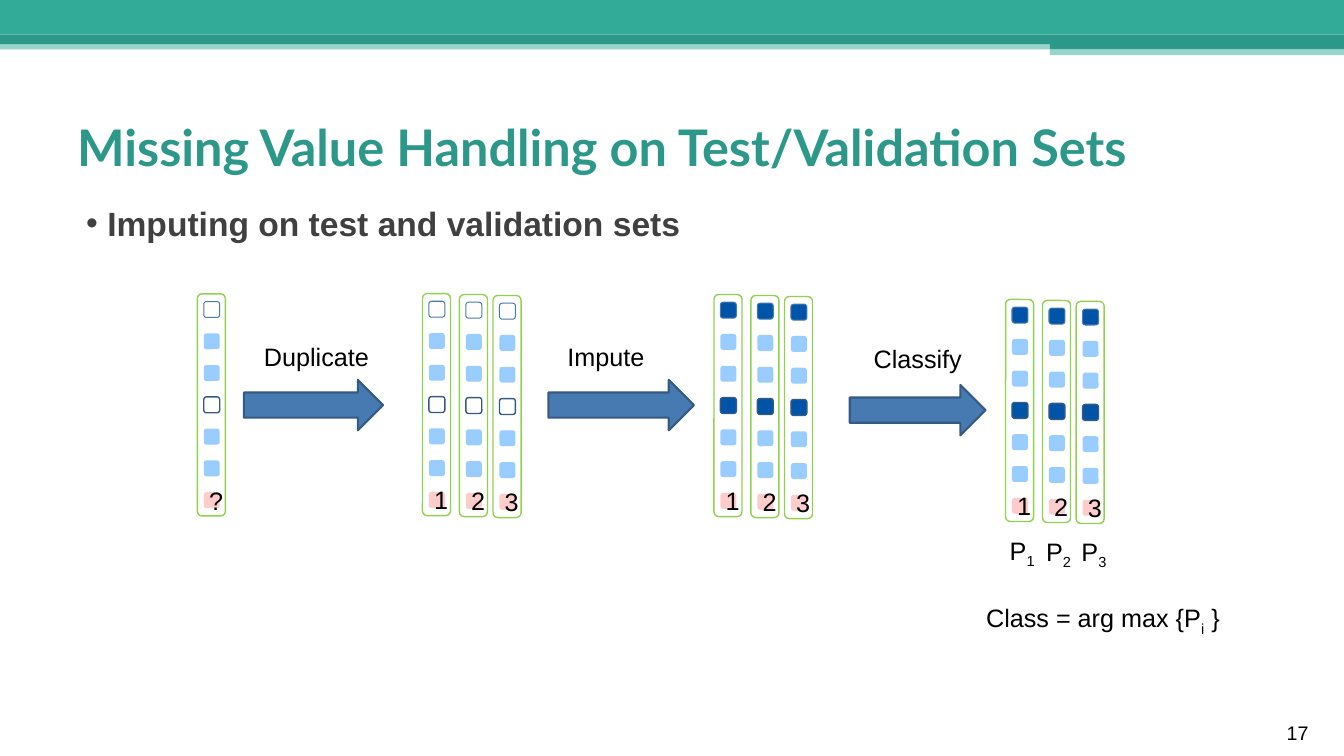
from dataclasses import dataclass

from lxml import etree
from pptx import Presentation
from pptx.dml.color import RGBColor
from pptx.enum.shapes import MSO_SHAPE
from pptx.enum.text import MSO_ANCHOR, MSO_AUTO_SIZE, PP_ALIGN
from pptx.oxml.ns import qn
from pptx.util import Pt

RECT = MSO_SHAPE.RECTANGLE
ROUND = MSO_SHAPE.ROUNDED_RECTANGLE
ARROW = MSO_SHAPE.RIGHT_ARROW
TOP = MSO_ANCHOR.TOP
MIDDLE = MSO_ANCHOR.MIDDLE
CENTER = PP_ALIGN.CENTER
GROW = MSO_AUTO_SIZE.SHAPE_TO_FIT_TEXT
FIXED = MSO_AUTO_SIZE.NONE

COLORS = {
    "teal": "32AB99", "dark_teal": "2C9889", "heading": "404040",
    "text": "000000", "known": "99CCFF", "imputed": "0054A8",
    "label": "FFCCCC", "frame": "92D050", "blue": "477AB1", "navy": "355A83",
}
TITLE = {"name": "Lato", "size": Pt(36), "bold": True}
HEADING = {"name": "Arial", "size": Pt(24), "bold": True}
BODY = {"name": "Arial", "size": Pt(18)}
NUMBER = {"name": "Arial", "size": Pt(14)}

FRAME_W, FRAME_H = 20, 158.6
CELL, CELL_DX, CELL_DY, PITCH = 11.4, 4.6, 5.5, 22.7
COPY_OFFSETS = [(0, 0), (26.4, 0.7), (50.4, 1.4)]


@dataclass
class Box:
    x: float
    y: float
    w: float
    h: float

    def lengths(self) -> list:
        return [Pt(v) for v in (self.x, self.y, self.w, self.h)]


@dataclass
class Band:
    box: Box
    color: str
    alpha: int = 100


@dataclass
class Stage:
    x: float
    y: float
    labels: str
    missing: str | None


@dataclass
class Step:
    arrow: Box
    caption: Box
    text: str


@dataclass
class Formula:
    box: Box
    text: str
    sub: str
    tail: str = ""


BANDS = [
    Band(Box(0, 28.8, 960, 6.5), "teal", 50),
    Band(Box(0, 0, 960, 24.5), "teal"),
    Band(Box(0, 24.5, 960, 7), "dark_teal"),
    Band(Box(750, 28, 210, 7), "dark_teal"),
    Band(Box(750, 34.6, 210, 4.8), "teal", 50),
]
STAGES = [
    Stage(141, 209.9, "?", None),
    Stage(301.8, 209.7, "123", None),
    Stage(510, 210.4, "123", "imputed"),
    Stage(718.3, 213.9, "123", "imputed"),
]
STEPS = [
    Step(Box(174.2, 271.4, 99.4, 36), Box(181.4, 240.5, 90, 28.8), "Duplicate"),
    Step(Box(391.7, 271.4, 104, 36), Box(398.2, 240.5, 69.8, 28.8), "Impute"),
    Step(Box(607, 275, 97, 36), Box(617, 241.5, 78.5, 28.8), "Classify"),
]
FORMULAS = [
    Formula(Box(714.2, 378.7, 33.1, 28.8), "P", "1"),
    Formula(Box(740.2, 379.4, 33.1, 28.8), "P", "2"),
    Formula(Box(765.4, 379.4, 33.1, 28.8), "P", "3"),
    Formula(Box(697.3, 427, 189.4, 28.8), "Class = arg max {P", "i", " }"),
]


def rgb(color: str) -> RGBColor:
    return RGBColor.from_string(COLORS[color])


def add_run(p, text: str, style: dict, color: str = "text", baseline: int = 0) -> None:
    r = p.add_run()
    r.text = text
    for name, value in style.items():
        setattr(r.font, name, value)
    r.font.color.rgb = rgb(color)
    if baseline:
        r.font._element.set("baseline", str(baseline))


def add_text(shapes, box: Box, style: dict, text: str, color: str = "text",
             wrap: bool = True, anchor=TOP):
    tf = shapes.add_textbox(*box.lengths()).text_frame
    settings = {"word_wrap": wrap, "vertical_anchor": anchor,
                "auto_size": FIXED if wrap else GROW}
    for name, value in settings.items():
        setattr(tf, name, value)
    p = tf.paragraphs[0]
    add_run(p, text, style, color)
    return p


def add_bullet(p, color: str) -> None:
    pPr = p._p.get_or_add_pPr()
    pPr.set("marL", str(Pt(21.6)))
    pPr.set("indent", str(-Pt(15.1)))
    buClr = etree.SubElement(pPr, qn("a:buClr"))
    etree.SubElement(buClr, qn("a:srgbClr"), val=COLORS[color])
    etree.SubElement(pPr, qn("a:buFont"), typeface="Arial")
    etree.SubElement(pPr, qn("a:buChar"), char="•")


def add_shape(shapes, kind, box: Box, fill: str | None = None,
              line: str | None = None, width: float = 1):
    s = shapes.add_shape(kind, *box.lengths())
    s.shadow.inherit = False
    if fill:
        s.fill.solid()
        s.fill.fore_color.rgb = rgb(fill)
    else:
        s.fill.background()
    if line:
        s.line.color.rgb = rgb(line)
        s.line.width = Pt(width)
    else:
        s.line.fill.background()
    return s


def add_band(shapes, band: Band) -> None:
    s = add_shape(shapes, RECT, band.box, band.color)
    if band.alpha < 100:
        color = s._element.spPr.find(".//" + qn("a:srgbClr"))
        etree.SubElement(color, qn("a:alpha"), val=str(band.alpha * 1000))


def add_column(shapes, x: float, y: float, label: str, missing: str | None) -> None:
    cells = [(missing, "blue", 0.75), ("known",), ("known",),
             (missing, "navy", 1), ("known",), ("known",), ("label",)]
    for i, look in enumerate(cells):
        box = Box(x + CELL_DX, y + CELL_DY + i * PITCH, CELL, CELL)
        s = add_shape(shapes, ROUND, box, *look)
    tf = s.text_frame
    tf.word_wrap = True
    tf.vertical_anchor = MIDDLE
    p = tf.paragraphs[0]
    p.alignment = CENTER
    add_run(p, label, BODY)
    add_shape(shapes, ROUND, Box(x, y, FRAME_W, FRAME_H), None, "frame")


def main() -> None:
    prs = Presentation()
    prs.slide_width, prs.slide_height = Pt(960), Pt(540)
    shapes = prs.slides.add_slide(prs.slide_layouts[6]).shapes

    for band in BANDS:
        add_band(shapes, band)
    add_text(shapes, Box(48, 73.4, 864, 62), TITLE,
             "Missing Value Handling on Test/Validation Sets", "dark_teal", anchor=MIDDLE)
    p = add_text(shapes, Box(48, 141.5, 864, 36), HEADING,
                 "Imputing on test and validation sets", "heading")
    add_bullet(p, "heading")
    add_text(shapes, Box(912, 511.2, 39, 21.6), NUMBER, "17")

    for stage in STAGES:
        for label, (dx, dy) in zip(stage.labels, COPY_OFFSETS):
            add_column(shapes, stage.x + dx, stage.y + dy, label, stage.missing)
    for step in STEPS:
        add_shape(shapes, ARROW, step.arrow, "blue", "navy", 1.5)
        add_text(shapes, step.caption, BODY, step.text, wrap=False)
    for formula in FORMULAS:
        p = add_text(shapes, formula.box, BODY, formula.text, wrap=False)
        add_run(p, formula.sub, BODY, baseline=-25000)
        if formula.tail:
            add_run(p, formula.tail, BODY)

    prs.save("out.pptx")


if __name__ == "__main__":
    main()
